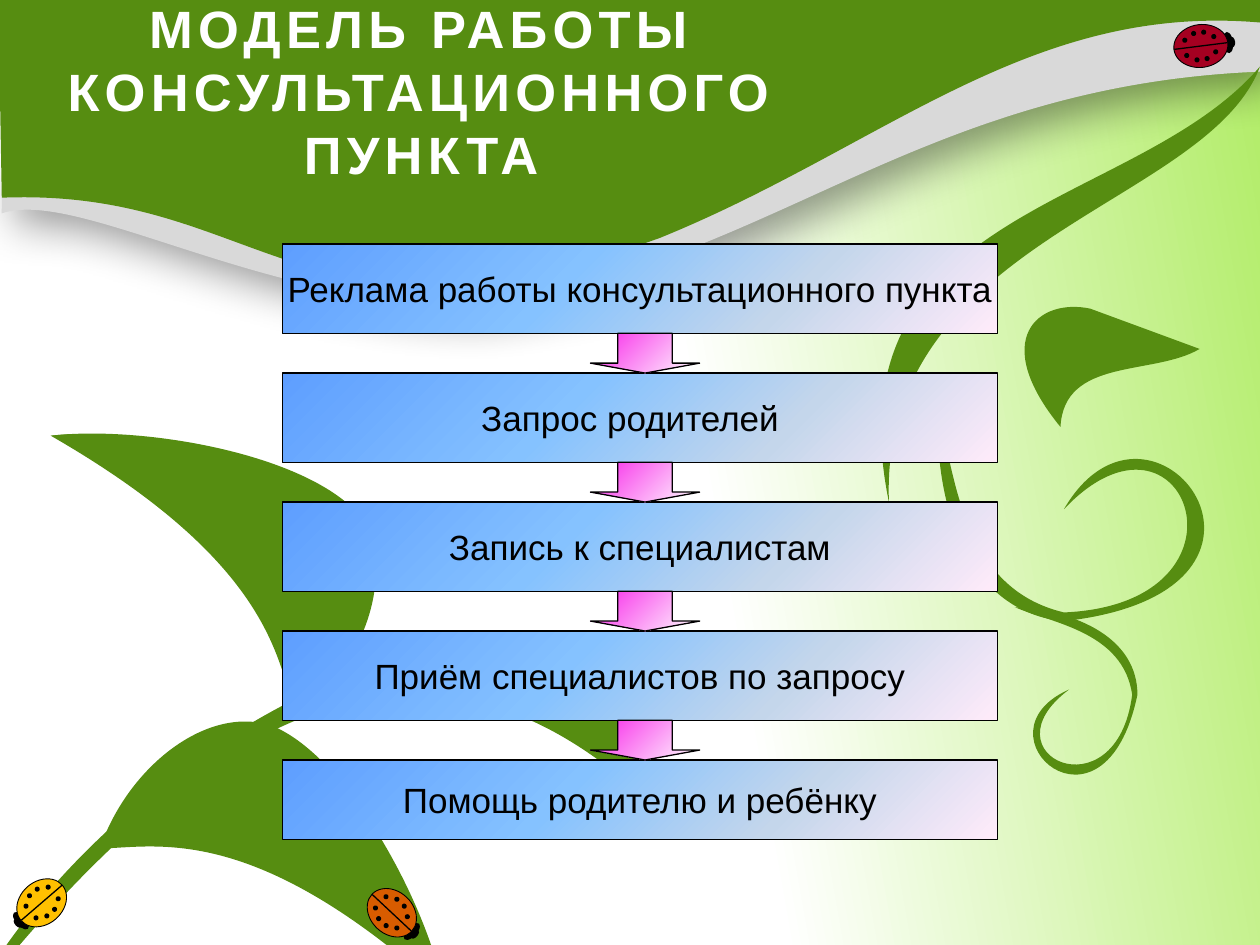
from copy import deepcopy
from math import cos, radians, sin

from lxml.etree import SubElement
from pptx import Presentation
from pptx.dml.color import RGBColor
from pptx.enum.shapes import MSO_CONNECTOR, MSO_SHAPE
from pptx.enum.text import MSO_ANCHOR, MSO_AUTO_SIZE, PP_ALIGN
from pptx.oxml.ns import qn
from pptx.util import Pt

FONT = "Arial"
BLACK = RGBColor(0x00, 0x00, 0x00)
WHITE = RGBColor(0xFF, 0xFF, 0xFF)
LEAF_GREEN = RGBColor(0x56, 0x8D, 0x11)
PALE_GREEN = RGBColor(0xB3, 0xED, 0x6A)
WAVE_GREY = RGBColor(0xD9, 0xD9, 0xD9)
ORANGE = RGBColor(0xD8, 0x5C, 0x00)
YELLOW = RGBColor(0xFF, 0xC0, 0x00)
RED = RGBColor(0xA5, 0x00, 0x21)
STEP_STOPS = [
    (0, RGBColor(0x5E, 0x9E, 0xFF)), (0.4, RGBColor(0x85, 0xC2, 0xFF)),
    (0.7, RGBColor(0xC4, 0xD6, 0xEB)), (1, RGBColor(0xFF, 0xEB, 0xFA)),
]
ARROW_STOPS = [(0, RGBColor(0xF7, 0x1F, 0xE8)), (1, WHITE)]
BACKGROUND_STOPS = [(0.55, WHITE), (0.99, PALE_GREEN)]

# Label and right margin of each step
STEPS = [
    ("Реклама работы консультационного пункта", 7.2),
    ("Запрос родителей", 18.3),
    ("Запись к специалистам", 7.2),
    ("Приём специалистов по запросу", 7.2),
    ("Помощь родителю и ребёнку", 7.2),
]

# Silhouettes in points: frame, rotation, then the outline as seen on the slide:
# a start, lines (x, y) and Bézier curves (six numbers)
GREY_WAVE = ((0.7, -2.2, 720, 175.7), 0, [
    (1, 122), (1.4, 92), (720.7, -2.2), (720, 41),
    (520, 49, 436, 156, 270, 174), (153, 176, 44, 107, 1, 122)])
GREEN_WAVE = ((199.4, -298.1, 297.4, 700.6), 105.1, [
    (721, 13), (723, -1), (603, -3, 120, -19, -1, 0), (1, 113),
    (151, 107, 171, 210, 377, 136), (505, 84, 588, 1, 721, 13)])
RIGHT_VINE = [
    ((503.3, 38.2, 216.7, 249.1), 0, [
        (720, 38), (649, 121, 473, 117, 508, 287), (502, 136, 690, 118, 720, 38)]),
    ((585.4, 175.7, 100.1, 68.4), 0, [
        (606, 244), (608, 204, 659, 215, 685.5, 199.4), (623, 176.4),
        (593, 170, 565, 194, 606, 244)]),
    ((535.7, 235.4, 152.6, 119.5), 0, [
        (536, 235), (546, 271, 549, 336, 608, 350), (724, 345, 677, 218, 608, 291),
        (658, 205, 760, 338, 608, 355), (555, 350, 534, 293, 536, 235)]),
    ((566.6, 358.6, 92.2, 74.9), 275.2, [
        (580, 347), (601, 356, 642, 361, 647, 397), (638, 467, 561, 431, 611, 394),
        (554, 419, 631, 488, 650, 397), (650, 365, 616, 349, 580, 347)]),
]
LEFT_LEAVES = [
    ((14.4, 255.6, 200.2, 141.8), 12.2, [
        (169, 410), (159, 378, 156, 322, 29, 249), (81, 243, 174, 259, 205, 294),
        (228, 326, 208, 382, 169, 410)]),
    ((14.4, 259.9, 187.2, 136.1), 12.2, [
        (169, 410), (214, 345, 168, 263, 29, 249), (81, 243, 141, 270, 172, 305),
        (194, 338, 208, 382, 169, 410)]),
    ((54, 439.2, 200.2, 141.8), 59.8, [
        (57, 485), (91, 484, 146, 470, 254, 568), (244, 516, 199, 433, 156, 415),
        (119, 402, 73, 438, 57, 485)]),
    ((61.2, 449.3, 187.2, 136.1), 59.8, [
        (57, 485), (106, 422, 198, 440, 254, 568), (244, 516, 199, 468, 156, 449),
        (119, 438, 73, 438, 57, 485)]),
    ((-7.9, 392.4, 386.6, 223.9), 133.2, [
        (377, 464), (279, 369, 158, 350, -19, 577), (30, 483, 138, 402, 225, 377),
        (298, 363, 379, 374, 377, 464)]),
]


def fill_gradient(fill, host, stops, angle):
    fill.gradient()
    fill.gradient_angle = angle
    stop_list = host.element.find(".//" + qn("a:gsLst"))
    for _ in stops[2:]:
        stop_list.append(deepcopy(stop_list[0]))
    for stop, (position, color) in zip(fill.gradient_stops, stops):
        stop.position = position
        stop.color.rgb = color


def outline(shape, width):
    shape.shadow.inherit = False
    shape.line.color.rgb = BLACK
    shape.line.width = Pt(width)


def draw_curves(silhouette, frame, rotation, segments):
    """Replace the straight outline by lines and Bézier curves."""
    left, top, width, height = frame
    turn = radians(rotation)
    contour = silhouette.element.find(".//" + qn("a:path"))
    for child in list(contour):
        contour.remove(child)
    for index, segment in enumerate(segments):
        tag = "a:moveTo" if index == 0 else "a:lnTo"
        command = SubElement(contour, qn(tag if len(segment) == 2 else "a:cubicBezTo"))
        for x, y in zip(segment[::2], segment[1::2]):
            dx, dy = x - left - width / 2, y - top - height / 2
            local_x = width / 2 + dx * cos(turn) + dy * sin(turn)
            local_y = height / 2 - dx * sin(turn) + dy * cos(turn)
            SubElement(command, qn("a:pt"), x=str(Pt(local_x)), y=str(Pt(local_y)))
    SubElement(contour, qn("a:close"))


def add_silhouette(slide, frame, rotation, segments, color):
    left, top, width, height = frame
    builder = slide.shapes.build_freeform(Pt(left), Pt(top))
    builder.add_line_segments([(Pt(left + width), Pt(top + height))])
    silhouette = builder.convert_to_shape()
    draw_curves(silhouette, frame, rotation, segments)
    silhouette.rotation = rotation
    silhouette.shadow.inherit = False
    silhouette.fill.solid()
    silhouette.fill.fore_color.rgb = color
    silhouette.line.fill.background()
    return silhouette


def add_wave_shadow(wave):
    effects = wave.element.spPr.find(qn("a:effectLst"))
    shadow = SubElement(effects, qn("a:outerShdw"), blurRad=str(Pt(25)),
                        dist=str(Pt(12)), dir="2700000", algn="tl", rotWithShape="0")
    tint = SubElement(shadow, qn("a:srgbClr"), val=str(BLACK))
    SubElement(tint, qn("a:alpha"), val="40000")


def add_scenery(slide):
    fill_gradient(slide.background.fill, slide, BACKGROUND_STOPS, 10)
    add_wave_shadow(add_silhouette(slide, *GREY_WAVE, WAVE_GREY))
    for silhouette in [GREEN_WAVE] + RIGHT_VINE + LEFT_LEAVES:
        add_silhouette(slide, *silhouette, LEAF_GREEN)


def add_ladybug(slide, center_x, center_y, heading, color):
    turn = radians(heading)

    def place(forward, side):
        return (center_x + forward * sin(turn) + side * cos(turn),
                center_y - forward * cos(turn) + side * sin(turn))

    def add_oval(forward, side, width, height, oval_color=BLACK):
        x, y = place(forward, side)
        oval = slide.shapes.add_shape(MSO_SHAPE.OVAL, Pt(x - width / 2),
                                      Pt(y - height / 2), Pt(width), Pt(height))
        oval.rotation = heading
        oval.shadow.inherit = False
        oval.fill.solid()
        oval.fill.fore_color.rgb = oval_color
        oval.line.fill.background()
        return oval

    add_oval(15.6, 0, 12.2, 5.8)  # head
    outline(add_oval(0, 0, 24.5, 31, color), 0.5)  # body
    ends = [Pt(value) for value in place(15.3, 0) + place(-15.3, 0)]
    wing_seam = slide.shapes.add_connector(MSO_CONNECTOR.STRAIGHT, *ends)
    wing_seam.line.color.rgb = BLACK
    wing_seam.line.width = Pt(0.75)
    SubElement(wing_seam.element.spPr, qn("a:effectLst"))
    add_oval(18.2, 0, 5.8, 2.9)  # nose
    for mirror in (-1, 1):  # spots
        for forward, side in [(8, 4.4), (2.6, 7.6), (-3.2, 7.6), (-8.7, 4.4)]:
            add_oval(forward, mirror * side, 2.9, 2.9)


def add_heading(slide, left, top, width, height):
    heading = slide.shapes.title
    slide.shapes.element.append(heading.element)  # above the scenery
    heading.left, heading.top, heading.width, heading.height = (
        Pt(left), Pt(top), Pt(width), Pt(height))
    frame = heading.text_frame
    frame.text = "МОДЕЛЬ РАБОТЫ КОНСУЛЬТАЦИОННОГО ПУНКТА"
    frame.word_wrap = True
    frame.auto_size = MSO_AUTO_SIZE.NONE
    frame.vertical_anchor = MSO_ANCHOR.MIDDLE
    frame.paragraphs[0].alignment = PP_ALIGN.CENTER
    font = frame.paragraphs[0].runs[0].font
    font.name, font.size, font.bold = FONT, Pt(30), True
    font.color.rgb = WHITE
    heading.element.find(".//" + qn("a:rPr")).set("spc", "300")


def add_block(slide, preset, box, stops):
    block = slide.shapes.add_shape(preset, *[Pt(value) for value in box])
    fill_gradient(block.fill, block, stops, 315)
    outline(block, 0.75)
    return block


def add_flow(slide, left, top, width, height):
    step_height, last_height, arrow_width = 51, 45.4, 62.4
    last = len(STEPS) - 1
    pitch = (height - last_height) / last
    tops = [top + index * pitch for index in range(len(STEPS))]
    for index, (label, right_margin) in enumerate(STEPS):
        box = (left, tops[index], width, last_height if index == last else step_height)
        step = add_block(slide, MSO_SHAPE.FLOWCHART_PROCESS, box, STEP_STOPS)
        frame = step.text_frame
        frame.text = label
        frame.word_wrap = False
        frame.margin_right = Pt(right_margin)
        frame.vertical_anchor = MSO_ANCHOR.MIDDLE
        frame.paragraphs[0].alignment = PP_ALIGN.CENTER
        font = frame.paragraphs[0].runs[0].font
        font.name, font.size = FONT, Pt(20)
        font.color.rgb = BLACK
    for step_top in tops[:-1]:
        arrow_box = (left + 175.9, step_top + step_height, arrow_width, pitch - step_height)
        arrow = add_block(slide, MSO_SHAPE.DOWN_ARROW, arrow_box, ARROW_STOPS)
        arrow.adjustments[0], arrow.adjustments[1] = 0.5, 0.25


def main():
    deck = Presentation()
    deck.slide_width, deck.slide_height = Pt(720), Pt(540)
    slide = deck.slides.add_slide(deck.slide_layouts[5])
    add_scenery(slide)
    add_ladybug(slide, 223.9, 521.6, 133.1, ORANGE)
    add_ladybug(slide, 23.8, 515.9, 229.3, YELLOW)
    add_ladybug(slide, 686.2, 26.3, 82.8, RED)
    add_heading(slide, 2, 3.6, 477.4, 96.5)
    add_flow(slide, 161.5, 139.5, 408.4, 340.2)
    deck.save("out.pptx")


if __name__ == "__main__":
    main()
